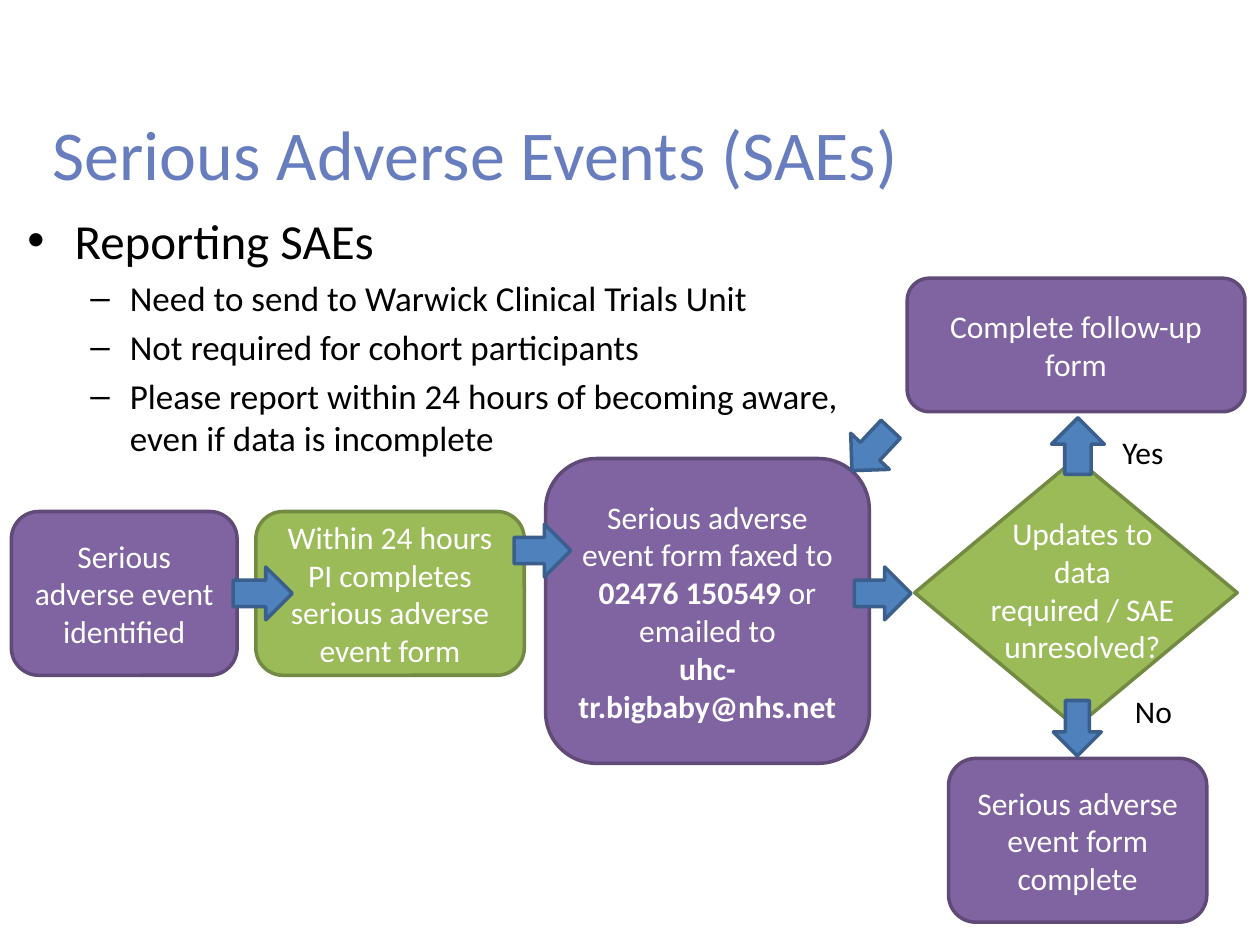
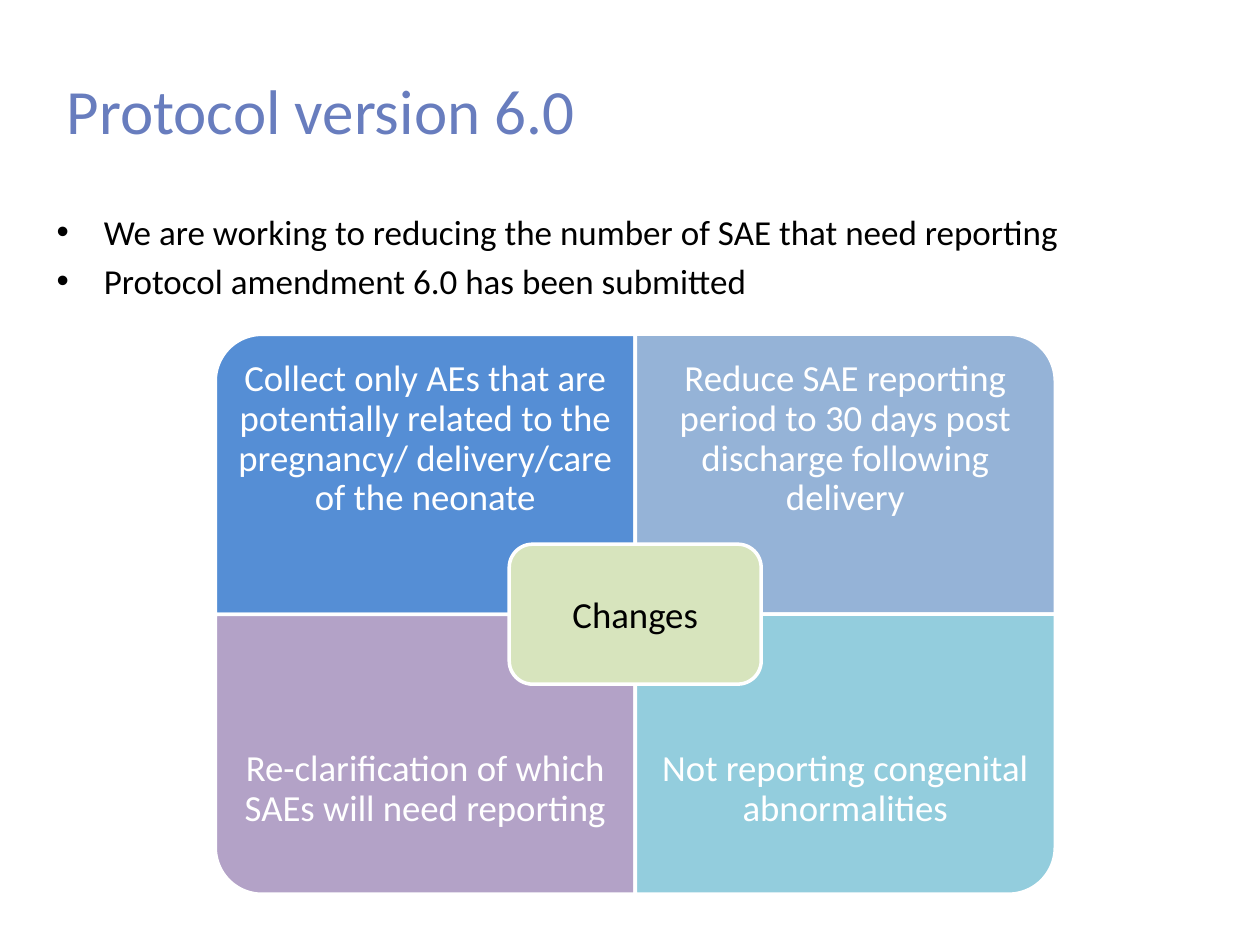
from dataclasses import dataclass

from lxml import etree
from pptx import Presentation
from pptx import util as u
from pptx.dml.color import RGBColor
from pptx.enum import shapes, text
from pptx.oxml import ns

FONT = "Calibri"
TITLE = "687DBE"
BLACK = "000000"
WHITE = "FFFFFF"
PURPLE = ("8064A2", "5F4A78")
GREEN = ("9BBB59", "738A42")
BLUE = ("4F81BD", "3A5F8C")
KIND = shapes.MSO_SHAPE
CENTER = text.PP_ALIGN.CENTER
LEFT = text.PP_ALIGN.LEFT

Box = tuple[float, float, float, float]


@dataclass(frozen=True)
class Block:
    box: Box
    colors: tuple[str, str]
    kind: int = KIND.ROUNDED_RECTANGLE
    words: str = ""
    turn: float = 0


@dataclass(frozen=True)
class Label:
    box: Box
    words: str
    size: float = 18
    color: str = BLACK
    align: int = LEFT
    wrap: bool = True


@dataclass(frozen=True)
class Bullet:
    words: str
    size: float = 20
    mark: str = "•"
    indent: float = 27
    hang: float = 27


@dataclass(frozen=True)
class Quadrant:
    column: int
    row: int
    turn: int
    color: str
    words: str


def rgb(value: str) -> RGBColor:
    return RGBColor.from_string(value)


def points(box: Box) -> list[u.Length]:
    return [u.Pt(length) for length in box]


def style(font, size: float, color: str) -> None:
    font.name = FONT
    font.size = u.Pt(size)
    font.color.rgb = rgb(color)


def write(frame, words: str, size: float, color: str, align: int) -> None:
    """Write one paragraph per line; asterisks enclose bold spans."""
    frame.text = "\n".join("" if "*" in line else line for line in words.split("\n"))
    frame.word_wrap = True
    for para, line in zip(frame.paragraphs, words.split("\n")):
        para.alignment = align
        if "*" in line:
            for index, part in enumerate(line.split("*")):
                if part:
                    span = para.add_run()
                    span.text = part
                    span.font.bold = index % 2 == 1
        for span in para.runs:
            style(span.font, size, color)


def add_block(page, block: Block, size: float = 18, color: str = WHITE):
    shape = page.shapes.add_shape(block.kind, *points(block.box))
    shape.shadow.inherit = False
    shape.rotation = block.turn
    fill, line = block.colors
    shape.fill.solid()
    shape.fill.fore_color.rgb = rgb(fill)
    shape.line.color.rgb = rgb(line)
    shape.line.width = u.Pt(2)
    if block.words:
        write(shape.text_frame, block.words, size, color, CENTER)
        shape.text_frame.vertical_anchor = text.MSO_ANCHOR.MIDDLE
    return shape


def add_label(page, label: Label):
    frame = page.shapes.add_textbox(*points(label.box)).text_frame
    write(frame, label.words, label.size, label.color, label.align)
    frame.word_wrap = label.wrap
    return frame


def add_title(page, box: Box, words: str, size: float) -> None:
    add_label(page, Label(box, words, size, TITLE))


def add_bullets(page, box: Box, bullets: list[Bullet]) -> None:
    frame = page.shapes.add_textbox(*points(box)).text_frame
    frame.word_wrap = True
    frame.text = "\n".join(bullet.words for bullet in bullets)
    for index, (para, bullet) in enumerate(zip(frame.paragraphs, bullets)):
        properties = para._p.get_or_add_pPr()
        properties.set("marL", str(u.Pt(bullet.indent)))
        properties.set("indent", str(-u.Pt(bullet.hang)))
        typeface = etree.SubElement(properties, ns.qn("a:buFont"))
        typeface.set("typeface", "Arial")
        mark = etree.SubElement(properties, ns.qn("a:buChar"))
        mark.set("char", bullet.mark)
        if index:
            para.space_before = u.Pt(bullet.size * 0.2)
        for span in para.runs:
            style(span.font, bullet.size, BLACK)


def dash(words: str) -> Bullet:
    return Bullet(words, mark="–", indent=58.5, hang=22.5)


def arrow(left: float, top: float, width: float = 32.4, turn: float = 0) -> Block:
    return Block((left, top, width, 30.2), BLUE, KIND.RIGHT_ARROW, turn=turn)


def build_reporting(page) -> None:
    add_title(page, (23, 59.8, 600, 88), "Serious Adverse Events (SAEs)", 40)
    add_bullets(page, (8.6, 116.6, 494, 351), [
        Bullet("Reporting SAEs", 28),
        dash("Need to send to Warwick Clinical Trials Unit"),
        dash("Not required for cohort participants"),
        dash("Please report within 24 hours of becoming aware, even if data is incomplete"),
    ])
    blocks = [
        Block((6.5, 292.3, 129, 93.6), PURPLE, words="Serious adverse event identified"),
        Block((146.2, 292.3, 153.4, 93.6), GREEN,
              words="Within 24 hours PI completes serious adverse event form"),
        Block((311.8, 262, 185, 174.2), PURPLE,
              words="Serious adverse event form faxed to\n"
                    "*02476 150549 *or emailed to\n*uhc-tr.bigbaby@nhs.net*"),
        Block((522.7, 262, 184.3, 153.4), GREEN, KIND.DIAMOND),
        Block((518.4, 159, 193, 76.3), PURPLE, words="Complete follow-up form"),
        Block((542, 433.4, 147.6, 93.6), PURPLE, words="Serious adverse event form complete"),
        arrow(133.2, 324, 33.8),
        arrow(293.8, 299.5),
        arrow(488.2, 324),
        Block((601.9, 400.3, 27.4, 31.7), BLUE, KIND.DOWN_ARROW),
        arrow(599.8, 239.8, turn=270),
        arrow(481.7, 242, turn=133.1),
    ]
    for block in blocks:
        add_block(page, block)
    labels = [
        Label((634.3, 244, 38.2, 28.8), "Yes", wrap=False),
        Label((641.5, 391.7, 36, 28.8), "No", wrap=False),
        Label((558, 290.2, 121, 94.3), "Updates to data required / SAE unresolved?",
              color=WHITE, align=CENTER),
    ]
    for label in labels:
        add_label(page, label)


def add_quadrant(page, quadrant: Quadrant) -> None:
    left, top, width, height = 123, 191, 240, 160
    text_height = 120
    left += quadrant.column * width
    top += quadrant.row * height
    across, down = (height, width) if quadrant.turn % 180 else (width, height)
    box = (left + (width - across) / 2, top + (height - down) / 2, across, down)
    add_block(page, Block(box, (quadrant.color, WHITE), KIND.ROUND_1_RECTANGLE,
                          turn=quadrant.turn))
    text_top = top + quadrant.row * (height - text_height)
    frame = add_label(page, Label((left, text_top, width, text_height), quadrant.words,
                                  21, WHITE, CENTER))
    frame.vertical_anchor = text.MSO_ANCHOR.MIDDLE
    frame.margin_left = frame.margin_right = u.Pt(11.5)
    frame.margin_top = frame.margin_bottom = u.Pt(11.5)
    frame.paragraphs[0].line_spacing = 0.9


def build_protocol(page) -> None:
    add_title(page, (31, 37.4, 663, 51), "Protocol version 6.0", 36)
    add_bullets(page, (25.2, 116.6, 663, 181.4), [
        Bullet("We are working to reducing the number of SAE that need reporting"),
        Bullet("Protocol amendment 6.0 has been submitted"),
    ])
    quadrants = [
        Quadrant(0, 0, 270, "558ED5", "Collect only AEs that are potentially related to the "
                                      "pregnancy/ delivery/care of the neonate"),
        Quadrant(1, 0, 0, "95B3D7", "Reduce SAE reporting period to 30 days post "
                                    "discharge following delivery"),
        Quadrant(0, 1, 180, "B3A2C7", "Re-clarification of which SAEs will need reporting"),
        Quadrant(1, 1, 90, "93CDDD", "Not reporting congenital abnormalities"),
    ]
    for quadrant in quadrants:
        add_quadrant(page, quadrant)
    changes = Block((291, 311, 144, 80), ("D7E4BD", WHITE), words="Changes")
    add_block(page, changes, 21, BLACK)


def main() -> None:
    deck = Presentation()
    deck.slide_width, deck.slide_height = u.Pt(720), u.Pt(540)
    for build in (build_reporting, build_protocol):
        build(deck.slides.add_slide(deck.slide_layouts[6]))
    deck.save("out.pptx")


if __name__ == "__main__":
    main()
